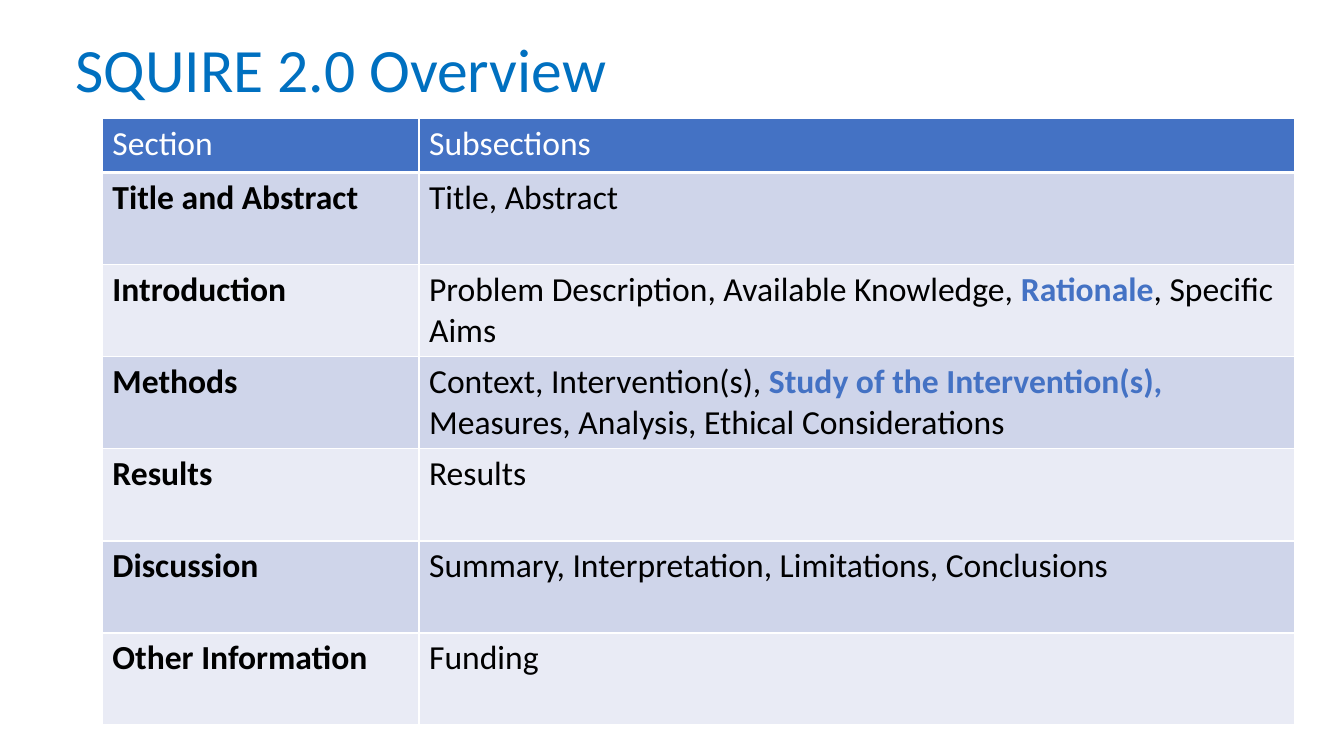
from pptx import Presentation
from pptx.dml.color import RGBColor
from pptx.enum.text import MSO_ANCHOR
from pptx.oxml import parse_xml
from pptx.oxml.ns import nsdecls
from pptx.util import Cm, Pt

TITLE_BLUE = RGBColor(0x00, 0x70, 0xC0)
ACCENT_BLUE = RGBColor(0x44, 0x72, 0xC4)
DARK_BAND = RGBColor(0xCF, 0xD5, 0xEA)
LIGHT_BAND = RGBColor(0xE9, 0xEB, 0xF5)
WHITE = RGBColor(0xFF, 0xFF, 0xFF)
BLACK = RGBColor(0x00, 0x00, 0x00)


def add_text(paragraph, text, size=24, color=BLACK, bold=False):
    run = paragraph.add_run()
    run.text = text
    run.font.name = "Calibri"
    run.font.size = Pt(size)
    run.font.color.rgb = color
    run.font.bold = bold


def add_borders(cell, bottom_width):
    properties = cell._tc.get_or_add_tcPr()
    for side, width in (("L", 1), ("R", 1), ("T", 1), ("B", bottom_width)):
        properties.append(parse_xml(
            f'<a:ln{side} {nsdecls("a")} w="{Pt(width)}"><a:solidFill>'
            f'<a:srgbClr val="{WHITE}"/></a:solidFill></a:ln{side}>'))


presentation = Presentation()
presentation.slide_width = Cm(33.87)
presentation.slide_height = Cm(19.05)
slide = presentation.slides.add_slide(presentation.slide_layouts[6])

# Title
title = slide.shapes.add_textbox(Cm(1.65), Cm(0), Cm(29.21), Cm(3.68))
title.text_frame.word_wrap = True
title.text_frame.vertical_anchor = MSO_ANCHOR.MIDDLE
title_paragraph = title.text_frame.paragraphs[0]
title_paragraph.line_spacing = 0.9
add_text(title_paragraph, "SQUIRE 2.0 Overview", size=44, color=TITLE_BLUE)

# Table content: section name, then (text, highlighted) pieces
sections = [
    ("Section", [("Subsections", False)]),
    ("Title and Abstract", [("Title, Abstract", False)]),
    ("Introduction", [
        ("Problem Description, Available Knowledge, ", False),
        ("Rationale", True),
        (", Specific Aims", False)]),
    ("Methods", [
        ("Context, Intervention(s), ", False),
        ("Study of the Intervention(s), ", True),
        ("Measures, Analysis, Ethical Considerations", False)]),
    ("Results", [("Results", False)]),
    ("Discussion", [("Summary, Interpretation, Limitations, Conclusions", False)]),
    ("Other Information", [("Funding", False)]),
]

# Table grid
HEADER_HEIGHT, ROW_HEIGHT = Cm(1.37), Cm(2.32)
SECTION_WIDTH, SUBSECTION_WIDTH = Cm(7.98), Cm(22.06)
table = slide.shapes.add_table(
    len(sections), 2, Cm(2.58), Cm(2.98), SECTION_WIDTH + SUBSECTION_WIDTH,
    HEADER_HEIGHT + ROW_HEIGHT * (len(sections) - 1)).table
table.columns[0].width = SECTION_WIDTH
table.columns[1].width = SUBSECTION_WIDTH

# Table rows
for index, (section, pieces) in enumerate(sections):
    is_header = index == 0
    table.rows[index].height = HEADER_HEIGHT if is_header else ROW_HEIGHT
    band = ACCENT_BLUE if is_header else DARK_BAND if index % 2 else LIGHT_BAND
    text_color = WHITE if is_header else BLACK
    section_cell, subsection_cell = table.cell(index, 0), table.cell(index, 1)
    for cell in (section_cell, subsection_cell):
        add_borders(cell, bottom_width=3 if is_header else 1)
        cell.fill.solid()
        cell.fill.fore_color.rgb = band
    add_text(section_cell.text_frame.paragraphs[0], section,
             color=text_color, bold=not is_header)
    for text, highlighted in pieces:
        add_text(subsection_cell.text_frame.paragraphs[0], text,
                 color=ACCENT_BLUE if highlighted else text_color, bold=highlighted)

presentation.save("out.pptx")
